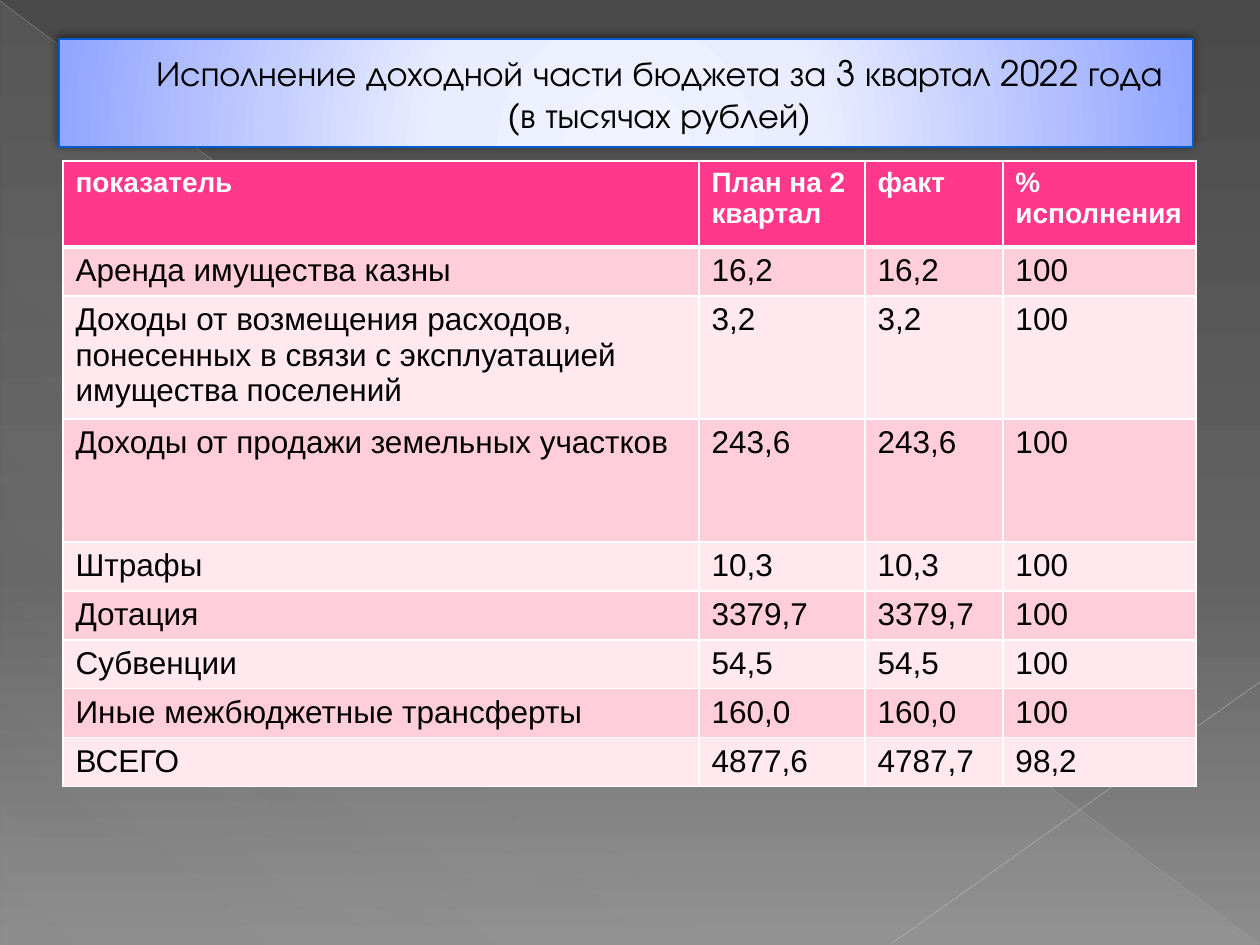
from lxml import etree
from pptx import Presentation
from pptx.dml.color import RGBColor
from pptx.enum.shapes import MSO_CONNECTOR, MSO_SHAPE
from pptx.enum.text import MSO_ANCHOR, PP_ALIGN
from pptx.oxml import parse_xml
from pptx.oxml.ns import qn
from pptx.util import Pt

PX = 9144000 // 1260
LINE = MSO_CONNECTOR.STRAIGHT
RECT = MSO_SHAPE.RECTANGLE
TRI = MSO_SHAPE.RIGHT_TRIANGLE
MID = MSO_ANCHOR.MIDDLE
LEFT, CENTER = PP_ALIGN.LEFT, PP_ALIGN.CENTER
NS = 'xmlns:a="http://schemas.openxmlformats.org/drawingml/2006/main"'

COLORS = {
    "top": "4A4A4A", "mid": "626262", "low": "8C8C8C",
    "veil": "D2D2D2", "long": "BFBFBF", "short": "C6C6C6",
    "pale": "F0F2FF", "soft": "EAEDFF", "blue": "92A5FF", "edge": "005BD3",
    "wine": "B12761", "head": "FF388C", "odd": "FFCEDA", "even": "FFE8EE",
    "white": "FFFFFF", "black": "000000",
}

TITLE = "Исполнение доходной части бюджета за 3 квартал 2022 года\v(в тысячах рублей)"
COLS = [636, 166, 138, 193]
ROWS = [86, 49, 123, 123] + [49] * 5
DATA = [
    ("показатель", "План на 2 квартал", "факт", "% исполнения"),
    ("Аренда имущества казны", "16,2", "16,2", "100"),
    ("Доходы от возмещения расходов, понесенных в связи с эксплуатацией "
     "имущества поселений", "3,2", "3,2", "100"),
    ("Доходы от продажи земельных участков", "243,6", "243,6", "100"),
    ("Штрафы", "10,3", "10,3", "100"),
    ("Дотация", "3379,7", "3379,7", "100"),
    ("Субвенции", "54,5", "54,5", "100"),
    ("Иные межбюджетные трансферты", "160,0", "160,0", "100"),
    ("ВСЕГО", "4877,6", "4787,7", "98,2"),
]


def rgb(name):
    return RGBColor.from_string(COLORS[name])


def emu(*sizes):
    return [size * PX for size in sizes]


def tint(name, alpha=100):
    return (f'<a:srgbClr val="{COLORS[name]}">'
            f'<a:alpha val="{alpha * 1000}"/></a:srgbClr>')


def blend(props, stops, way):
    """Swap the solid fill in props for a gradient of (place, color, alpha)."""
    marks = "".join(f'<a:gs pos="{place * 1000}">{tint(name, alpha)}</a:gs>'
                    for place, name, alpha in stops)
    solid = props.find(qn("a:solidFill"))
    props.replace(solid, parse_xml(
        f'<a:gradFill {NS} rotWithShape="1"><a:gsLst>{marks}</a:gsLst>{way}</a:gradFill>'))


def slant(angle):
    return f'<a:lin ang="{angle * 60000}" scaled="0"/>'


def write(frame, text, size=18, font="Arial", color="black", bold=False, align=LEFT):
    frame.word_wrap = True
    para = frame.paragraphs[0]
    para.text = text
    para.alignment = align
    for run in para.runs:
        run.font.size = Pt(size)
        run.font.name = font
        run.font.bold = bold
        run.font.color.rgb = rgb(color)
    return para


def add_ray(slide, ends, color, width, alpha):
    ray = slide.shapes.add_connector(LINE, *emu(*ends))
    ray.line.width = Pt(width)
    ray.line.color.rgb = rgb(color)
    props = ray.element.spPr
    mark = props.find(".//" + qn("a:srgbClr"))
    etree.SubElement(mark, qn("a:alpha"), val=str(alpha * 1000))
    etree.SubElement(props, qn("a:effectLst"))


def add_back(slide, left, top, width, height):
    # Grey backdrop
    slide.background.fill.solid()
    props = slide.element.find(".//" + qn("p:bgPr"))
    blend(props, [(0, "top", 100), (60, "mid", 100), (100, "low", 100)], slant(90))
    # Faint triangle and rays
    veil = slide.shapes.add_shape(
        TRI, *emu(left + 1, top + 2, width - 2, height - 2))
    veil.shadow.inherit = False
    veil.line.fill.background()
    veil.fill.solid()
    blend(veil.element.spPr,
          [(0, "veil", 10), (70, "veil", 8), (100, "veil", 1)], slant(133))
    right, base = left + width, top + height - 1
    add_ray(slide, (left, top + 1, right - 1, base), "long", 0.39, 35)
    add_ray(slide, (right, top + 682, left + 891, base), "short", 0.47, 45)


def add_title(slide, left, top, width, height):
    box = slide.shapes.add_shape(RECT, *emu(left, top, width, height))
    box.shadow.inherit = False
    box.line.color.rgb = rgb("edge")
    box.line.width = Pt(0.75)
    box.fill.solid()
    props = box.element.spPr
    blend(props, [(0, "pale", 100), (34, "soft", 100), (100, "blue", 100)],
          '<a:path path="circle"><a:fillToRect l="50000" t="155000" '
          'r="50000" b="-55000"/></a:path>')
    # Soft shadow
    props.find(qn("a:effectLst")).append(parse_xml(
        f'<a:outerShdw {NS} blurRad="{Pt(5)}" dist="{Pt(2)}" dir="{245 * 60000}" '
        f'rotWithShape="0">{tint("black", 50)}</a:outerShdw>'))
    # Indented text with a thin outline
    box.text_frame.vertical_anchor = MID
    para = write(box.text_frame, TITLE, size=20, font="TeX Gyre Adventor", align=CENTER)
    para._p.get_or_add_pPr().set("marL", str(67 * PX))
    for run in para.runs:
        run.font._element.insert(0, parse_xml(
            f'<a:ln {NS} w="{Pt(0.5)}"><a:solidFill>{tint("wine")}</a:solidFill></a:ln>'))


def add_edges(cell, base):
    props = cell._tc.get_or_add_tcPr()
    for side, width in (("L", 1), ("R", 1), ("T", 1), ("B", base)):
        props.append(parse_xml(
            f'<a:ln{side} {NS} w="{Pt(width)}"><a:solidFill>{tint("white")}'
            f'</a:solidFill></a:ln{side}>'))


def add_grid(slide, left, top):
    table = slide.shapes.add_table(
        len(ROWS), len(COLS), *emu(left, top, sum(COLS), sum(ROWS))).table
    for col, width in zip(table.columns, COLS):
        col.width = width * PX
    for num, (row, height, words) in enumerate(zip(table.rows, ROWS, DATA)):
        row.height = height * PX
        head = num == 0
        fill = "head" if head else ("odd" if num % 2 else "even")
        look = {"size": 16, "color": "white", "bold": True} if head else {}
        for cell, text in zip(row.cells, words):
            add_edges(cell, 3 if head or num == 0 else 1)
            cell.fill.solid()
            cell.fill.fore_color.rgb = rgb(fill)
            write(cell.text_frame, text, **look)


def main():
    deck = Presentation()
    deck.slide_width, deck.slide_height = emu(1260, 945)
    slide = deck.slides.add_slide(deck.slide_layouts[6])
    add_back(slide, 0, 0, 1260, 945)
    add_title(slide, 59, 39, 1134, 108)
    add_grid(slide, 63, 161)
    deck.save("out.pptx")


if __name__ == "__main__":
    main()
